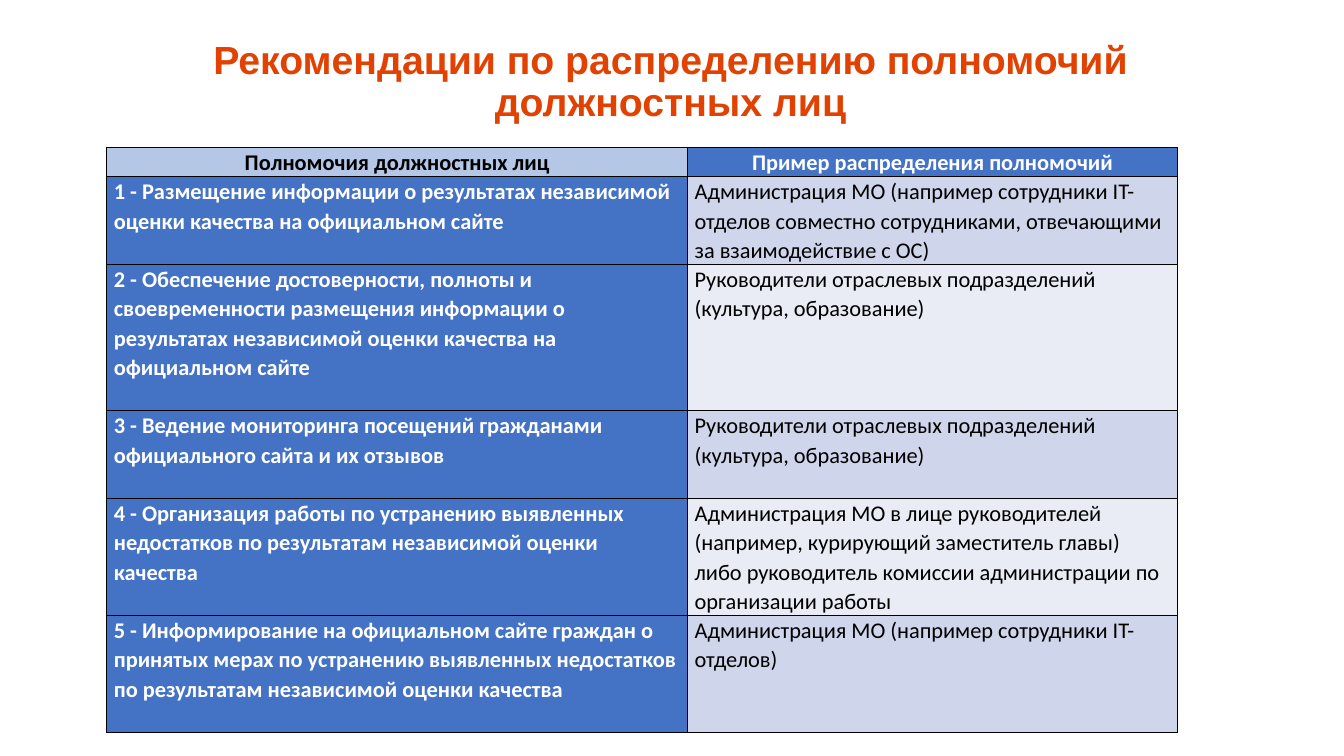
from lxml.etree import SubElement
from pptx import Presentation
from pptx.dml.color import RGBColor
from pptx.enum.text import MSO_ANCHOR, MSO_AUTO_SIZE, PP_ALIGN
from pptx.oxml import parse_xml
from pptx.oxml.ns import nsdecls, qn
from pptx.util import Inches, Pt

COLORS = {
    "title": "E14101",
    "text": "000000",
    "inverse": "FFFFFF",
    "border": "000000",
    "duty": "4472C4",
    "duty_header": "B4C7E7",
    "band_dark": "CFD5EA",
    "band_light": "E9EBF5",
}
LINE_HEIGHT = 0.29
HEADERS = ("Полномочия должностных лиц", "Пример распределения полномочий")
# Duty, example of who carries it out, row height in text lines
ASSIGNMENTS = [
    ("1 - Размещение информации о результатах независимой оценки качества "
     "на официальном сайте",
     "Администрация МО (например сотрудники IT-отделов совместно сотрудниками, "
     "отвечающими за взаимодействие с ОС)", 3),
    ("2 - Обеспечение достоверности, полноты и своевременности размещения "
     "информации о результатах независимой оценки качества на официальном сайте",
     "Руководители отраслевых подразделений (культура, образование)", 5),
    ("3 - Ведение мониторинга посещений гражданами официального сайта и их отзывов",
     "Руководители отраслевых подразделений (культура, образование)", 3),
    ("4 - Организация работы по устранению выявленных недостатков "
     "по результатам независимой оценки качества",
     "Администрация МО в лице руководителей (например, курирующий заместитель "
     "главы) либо руководитель комиссии администрации по организации работы", 4),
    ("5 - Информирование на официальном сайте граждан о принятых мерах "
     "по устранению выявленных недостатков по результатам независимой оценки качества",
     "Администрация МО (например сотрудники IT-отделов)", 4),
]


def write_text(frame, text, *, size=16, font="Calibri", color="text",
               bold=False, align=PP_ALIGN.LEFT, spacing=1.07):
    frame.word_wrap = True
    paragraph = frame.paragraphs[0]
    paragraph.alignment = align
    paragraph.line_spacing = spacing
    run = paragraph.add_run()
    run.text = text
    run.font.name = font
    run.font.size = Pt(size)
    run.font.bold = bold
    run.font.color.rgb = RGBColor.from_string(COLORS[color])


class SlideBuilder:
    def __init__(self, presentation):
        self.slide = presentation.slides.add_slide(presentation.slide_layouts[5])

    def title(self, text, left, top, width, height):
        title = self.slide.shapes.title
        title.left, title.top = Inches(left), Inches(top)
        title.width, title.height = Inches(width), Inches(height)
        frame = title.text_frame
        frame.auto_size = MSO_AUTO_SIZE.NONE
        frame.vertical_anchor = MSO_ANCHOR.MIDDLE
        write_text(frame, text, size=28, font="Arial", color="title", bold=True,
                   align=PP_ALIGN.CENTER, spacing=0.9)

    def table(self, left, top, column_widths, row_heights):
        table = self.slide.shapes.add_table(
            len(row_heights), len(column_widths), Inches(left), Inches(top),
            Inches(sum(column_widths)), Inches(sum(row_heights))).table
        table.first_row = table.horz_banding = False
        for column, width in zip(table.columns, column_widths):
            column.width = Inches(width)
        for row, height in zip(table.rows, row_heights):
            row.height = Inches(height)
        return table

    def cell(self, cell, text, fill, **text_format):
        cell.margin_left = cell.margin_right = Inches(0.07)
        cell.margin_top = cell.margin_bottom = 0
        cell.fill.solid()
        cell.fill.fore_color.rgb = RGBColor.from_string(COLORS[fill])
        self.borders(cell)
        write_text(cell.text_frame, text, **text_format)

    def borders(self, cell):
        """Put a 1 pt line on each side, ahead of the fill as the schema asks."""
        properties = cell._tc.get_or_add_tcPr()
        for index, side in enumerate(("lnL", "lnR", "lnT", "lnB")):
            line = parse_xml(f'<a:{side} {nsdecls("a")} w="{Pt(1)}"/>')
            solid = SubElement(line, qn("a:solidFill"))
            SubElement(solid, qn("a:srgbClr"), val=COLORS["border"])
            properties.insert(index, line)


def main():
    presentation = Presentation()
    presentation.slide_width = Inches(13.33)
    presentation.slide_height = Inches(7.5)
    builder = SlideBuilder(presentation)

    heights = [LINE_HEIGHT] + [lines * LINE_HEIGHT for *_, lines in ASSIGNMENTS]
    duties = builder.table(1.06, 1.46, (5.76, 4.86), heights)
    header_styles = (("duty_header", "text"), ("duty", "inverse"))
    for column, (header, (fill, color)) in enumerate(zip(HEADERS, header_styles)):
        builder.cell(duties.cell(0, column), header, fill, color=color,
                     bold=True, align=PP_ALIGN.CENTER)
    for row, (duty, example, _) in enumerate(ASSIGNMENTS, start=1):
        builder.cell(duties.cell(row, 0), duty, "duty", color="inverse", bold=True)
        band = "band_dark" if row % 2 else "band_light"
        builder.cell(duties.cell(row, 1), example, band)

    builder.title("Рекомендации по распределению полномочий должностных лиц",
                  1.87, 0, 9.56, 1.64)
    presentation.save("out.pptx")


if __name__ == "__main__":
    main()
